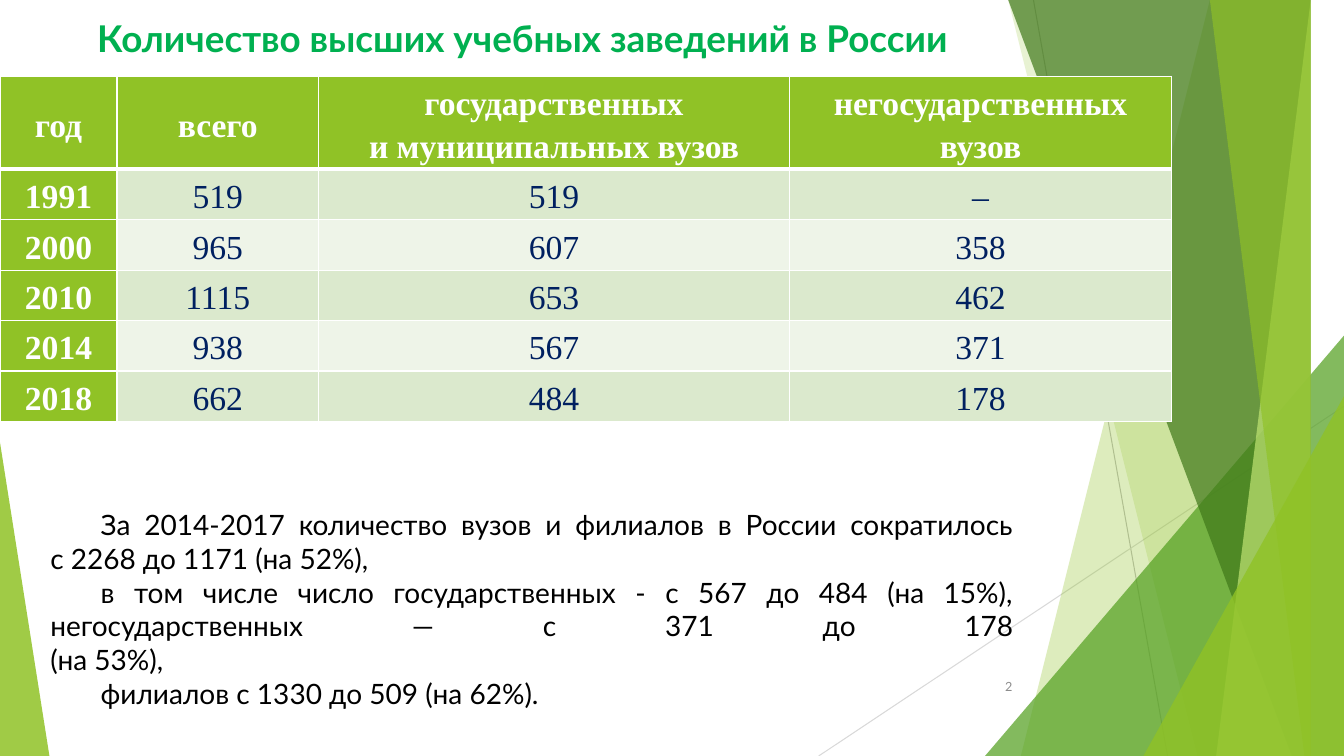
import pptx
import pptx.util
import pptx.dml.color
import pptx.enum.shapes
import pptx.enum.text
import pptx.oxml.ns
import lxml.etree

Inches = pptx.util.Inches
Pt = pptx.util.Pt
ALIGN = pptx.enum.text.PP_ALIGN
ANCHOR = pptx.enum.text.MSO_ANCHOR
qn = pptx.oxml.ns.qn

COLORS = {
    "lime": "90C226", "pale lime": "C0E474", "green": "54A021", "dark green": "3F7819",
    "odd row": "DBE9CD", "even row": "EEF4E8", "navy": "002060", "title": "00B050",
    "white": "FFFFFF", "black": "000000", "number": "8C8C8C",
    "gray line": "BFBFBF", "light line": "D9D9D9",
}
TITLE = "Количество высших учебных заведений в России"
PAGE_NUMBER = "2"
TABLE_ROWS = [
    ("год", "всего", "государственных\nи муниципальных вузов", "негосударственных\nвузов"),
    ("1991", "519", "519", "–"),
    ("2000", "965", "607", "358"),
    ("2010", "1115", "653", "462"),
    ("2014", "938", "567", "371"),
    ("2018", "662", "484", "178"),
]
COLUMN_WIDTHS = [1.16, 2, 4.67, 3.79]
HEADER_HEIGHT, ROW_HEIGHT = 0.84, 0.5
SUMMARY = [
    "За 2014-2017 количество вузов и филиалов в России сократилось\nс 2268 до 1171 (на 52%), ",
    "в том числе число государственных - с 567 до 484 (на 15%), "
    "негосударственных — с 371 до 178\n(на 53%), ",
    "филиалов с 1330 до 509 (на 62%).",
]
RAYS = [
    ((10.25, 0), (11.58, 7.5), "gray line"),
    ((13.33, 4.03), (8.12, 7.5), "light line"),
]
FACETS = [
    ("band", (12.28, 10.04), "lime", 30),
    ("band", (10.5, 11.83), "lime", 20),
    ("triangle", (9.77, 3.33, 3.56, 4.17, 1), "green", 72),
    ("band", (10.21, 12.91), "dark green", 70),
    ("band", (13.03, 11.92), "pale lime", 70),
    ("band", (11.96, 13.18), "lime", 65),
    ("triangle", (11.34, 3.93, 1.99, 3.57, 1), "lime", 80),
    ("triangle", (0, 4.39, 0.49, 3.11, 0), "lime", 85),
]
BAND_TOP, PAGE_RIGHT, PAGE_BOTTOM = -0.01, 13.33, 7.5


def color(name):
    return pptx.dml.color.RGBColor.from_string(COLORS[name])


def add_ray(page, start, end, line_color):
    ray = page.shapes.add_connector(
        pptx.enum.shapes.MSO_CONNECTOR.STRAIGHT, *map(Inches, start + end))
    ray.line.color.rgb = color(line_color)
    ray.line.width = Pt(0.75)
    lxml.etree.SubElement(ray.element.spPr, qn("a:effectLst"))


def add_facet(page, kind, geometry, fill_color, opacity):
    if kind == "band":
        top_left, bottom_left = geometry
        builder = page.shapes.build_freeform(top_left, BAND_TOP, scale=Inches(1))
        builder.add_line_segments([
            (PAGE_RIGHT, BAND_TOP), (PAGE_RIGHT, PAGE_BOTTOM), (bottom_left, PAGE_BOTTOM)])
        facet = builder.convert_to_shape()
    else:
        *frame, apex = geometry
        facet = page.shapes.add_shape(
            pptx.enum.shapes.MSO_SHAPE.ISOSCELES_TRIANGLE, *map(Inches, frame))
        facet.adjustments[0] = apex
    facet.shadow.inherit = False
    facet.line.fill.background()
    facet.fill.solid()
    facet.fill.fore_color.rgb = color(fill_color)
    tint = facet.element.spPr.find(qn("a:solidFill"))[0]
    lxml.etree.SubElement(tint, qn("a:alpha"), val=str(opacity * 1000))


def write(para, text, font, size, font_color, align, bold=False):
    para.text = text
    para.alignment = align
    para.font.name = font
    para.font.size = Pt(size)
    para.font.bold = bold
    para.font.color.rgb = color(font_color)


def add_text(page, frame, texts, size, font_color, align, anchor, bold=False, indent=0):
    box = page.shapes.add_textbox(*map(Inches, frame))
    box.text_frame.word_wrap = True
    box.text_frame.vertical_anchor = anchor
    for index, text in enumerate(texts):
        para = box.text_frame.paragraphs[0] if index == 0 else box.text_frame.add_paragraph()
        write(para, text, "Lato", size, font_color, align, bold)
        if indent:
            para._p.get_or_add_pPr().set("indent", str(Inches(indent)))


def set_borders(cell, widths):
    properties = cell._tc.get_or_add_tcPr()
    for index, (side, width) in enumerate(widths.items()):
        border = lxml.etree.Element(qn("a:ln" + side), w=str(Pt(width)))
        fill = lxml.etree.SubElement(border, qn("a:solidFill"))
        lxml.etree.SubElement(fill, qn("a:srgbClr"), val=COLORS["white"])
        properties.insert(index, border)


def add_university_table(page):
    heights = [HEADER_HEIGHT] + [ROW_HEIGHT] * (len(TABLE_ROWS) - 1)
    table = page.shapes.add_table(
        len(heights), len(COLUMN_WIDTHS), Inches(0), Inches(0.76),
        Inches(sum(COLUMN_WIDTHS)), Inches(sum(heights))).table
    for column, width in zip(table.columns, COLUMN_WIDTHS):
        column.width = Inches(width)
    for row_index, (values, height) in enumerate(zip(TABLE_ROWS, heights)):
        table.rows[row_index].height = Inches(height)
        for column_index, value in enumerate(values):
            cell = table.cell(row_index, column_index)
            heading = row_index == 0 or column_index == 0
            stripe = "odd row" if row_index % 2 else "even row"
            cell.fill.solid()
            cell.fill.fore_color.rgb = color("lime" if heading else stripe)
            cell.vertical_anchor = ANCHOR.MIDDLE
            cell.margin_left = cell.margin_right = Inches(0.07)
            cell.margin_top = cell.margin_bottom = 0
            para = cell.text_frame.paragraphs[0]
            write(para, value, "Times New Roman", 24,
                  "white" if heading else "navy", ALIGN.CENTER, heading)
            para.line_spacing = 1.15
            set_borders(cell, {"L": 1, "R": 1, "T": 3 if row_index == 1 else 1,
                               "B": 3 if row_index == 0 else 1})


def main():
    deck = pptx.Presentation()
    deck.slide_width, deck.slide_height = Inches(PAGE_RIGHT), Inches(PAGE_BOTTOM)
    page = deck.slides.add_slide(deck.slide_layouts[6])
    for ray in RAYS:
        add_ray(page, *ray)
    for facet in FACETS:
        add_facet(page, *facet)
    add_text(page, (9.39, 6.61, 0.75, 0.4), [PAGE_NUMBER], 9, "number",
             ALIGN.RIGHT, ANCHOR.MIDDLE)
    add_text(page, (0, 0.11, 10.36, 0.65), [TITLE], 26.3, "title",
             ALIGN.CENTER, ANCHOR.TOP, bold=True)
    add_university_table(page)
    add_text(page, (0.4, 4.33, 9.75, 2.76), SUMMARY, 20, "black",
             ALIGN.JUSTIFY, ANCHOR.BOTTOM, indent=0.5)
    deck.save("out.pptx")


if __name__ == "__main__":
    main()
